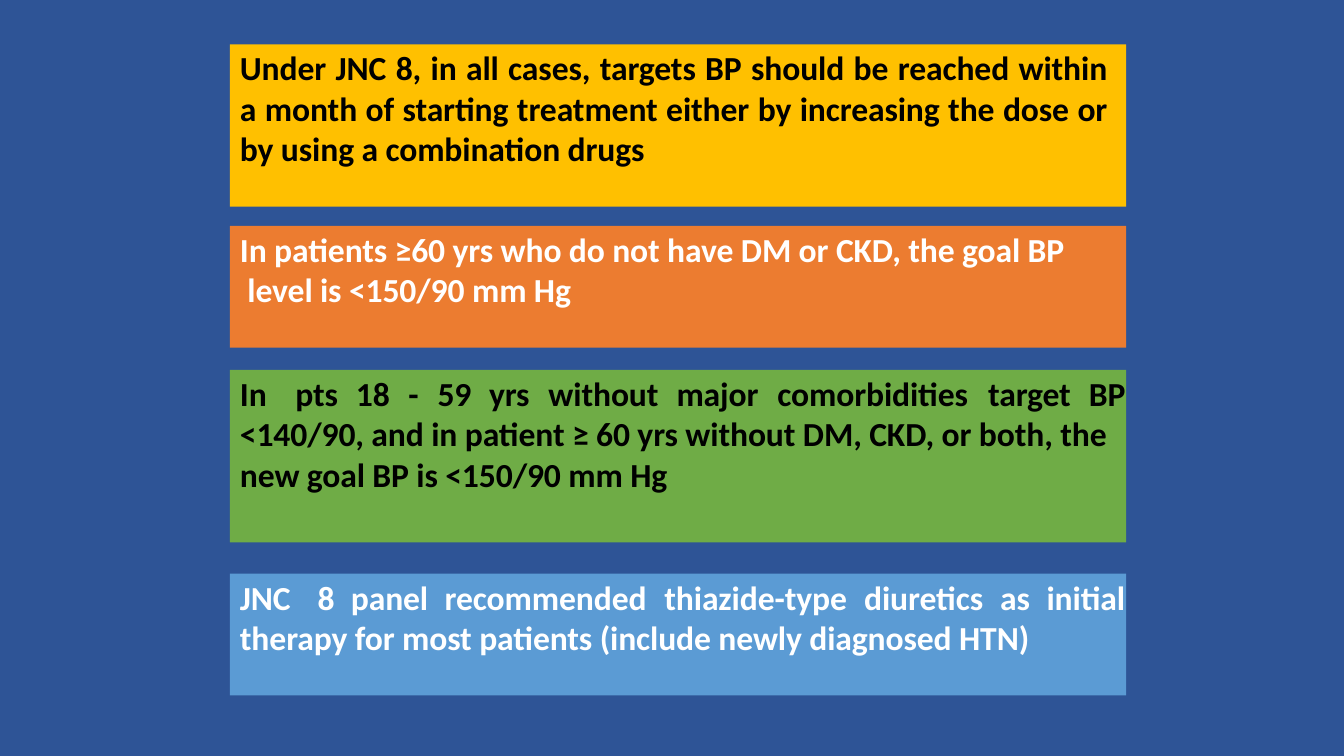
from lxml import etree
from pptx import Presentation
from pptx.dml.color import RGBColor
from pptx.enum import shapes, text
from pptx.oxml import ns
from pptx.util import Inches, Pt

COLORS = {
    "background": "2E5496", "yellow": "FFC000", "orange": "EC7C30",
    "green": "6FAC46", "blue": "5B9BD4", "black": "000000", "white": "FFFFFF",
}
SLIDE_WIDTH, SLIDE_HEIGHT = 13.33, 7.5
LEFT, WIDTH = 2.28, 8.89
INDENT = 0.1
LEFT_ALIGN, JUSTIFY = text.PP_ALIGN.LEFT, text.PP_ALIGN.JUSTIFY

# top, height, fill, font colour, alignment, right inset, tab stops, paragraphs
PANELS = [
    (0.44, 1.61, "yellow", "black", JUSTIFY, 0.19, [], [
        ["Under JNC 8, in all cases, targets BP should be reached within "
         "a month of starting treatment either by increasing the dose or "
         "by using a combination drugs"]]),
    (2.24, 1.21, "orange", "white", LEFT_ALIGN, 0, [], [
        ["In patients ≥60 yrs who do not have DM or CKD, the goal BP",
         " level is <150/90 mm Hg"]]),
    (3.67, 1.71, "green", "black", LEFT_ALIGN, 0,
     [0.55, 1.15, 1.67, 1.96, 2.47, 3.06, 4.33, 5.33, 7.42, 8.42], [
        ["In\tpts\t18\t-\t59\tyrs\twithout\tmajor\tcomorbidities\ttarget\tBP"],
        ["<140/90, and in patient ≥ 60 yrs without DM, CKD, or both, the "
         "new goal BP is <150/90 mm Hg"]]),
    (5.69, 1.21, "blue", "white", LEFT_ALIGN, 0,
     [0.77, 1.1, 2.03, 4.21, 6.19, 7.54, 8], [
        ["JNC\t8\tpanel\trecommended\tthiazide-type\tdiuretics\tas\tinitial"],
        ["therapy for most patients (include newly diagnosed HTN)"]]),
]


def rgb(name):
    return RGBColor.from_string(COLORS[name])


def add_block(s, left, top, width, height, fill):
    sp = s.shapes.add_shape(shapes.MSO_SHAPE.RECTANGLE, Inches(left), Inches(top),
                            Inches(width), Inches(height))
    sp.shadow.inherit = False
    sp.fill.solid()
    sp.fill.fore_color.rgb = rgb(fill)
    sp.line.fill.background()
    return sp


def set_indent_and_tabs(p, stops):
    pPr = p._p.get_or_add_pPr()
    pPr.set("marL", str(Inches(INDENT)))
    etree.SubElement(pPr, ns.qn("a:buNone"))
    if stops:
        tabs = etree.SubElement(pPr, ns.qn("a:tabLst"))
        for stop in stops:
            etree.SubElement(tabs, ns.qn("a:tab"), pos=str(Inches(stop)), algn="l")


def add_run(p, words, color):
    r = p.add_run()
    r.text = words
    r.font.name = "Calibri"
    r.font.size = Pt(24)
    r.font.bold = True
    r.font.color.rgb = rgb(color)
    r._r.get_or_add_rPr().set("spc", "-8")


def add_panel(s, top, height, fill, color, align, right, stops, paragraphs):
    tf = add_block(s, LEFT, top, WIDTH, height, fill).text_frame
    tf.word_wrap = True
    tf.vertical_anchor = text.MSO_ANCHOR.TOP
    tf.margin_left = tf.margin_bottom = 0
    tf.margin_right = Inches(right)
    tf.margin_top = Inches(0.03)
    for i, lines in enumerate(paragraphs):
        p = tf.add_paragraph() if i else tf.paragraphs[0]
        set_indent_and_tabs(p, [] if i else stops)
        p.alignment = align
        for j, words in enumerate(lines):
            if j:
                p.add_line_break()
            add_run(p, words, color)


def build_targets_slide(prs):
    s = prs.slides.add_slide(prs.slide_layouts[6])
    add_block(s, 0, 0, SLIDE_WIDTH, SLIDE_HEIGHT, "background")
    for panel in PANELS:
        add_panel(s, *panel)


def main():
    prs = Presentation()
    prs.slide_width, prs.slide_height = Inches(SLIDE_WIDTH), Inches(SLIDE_HEIGHT)
    build_targets_slide(prs)
    prs.save("out.pptx")


if __name__ == "__main__":
    main()
